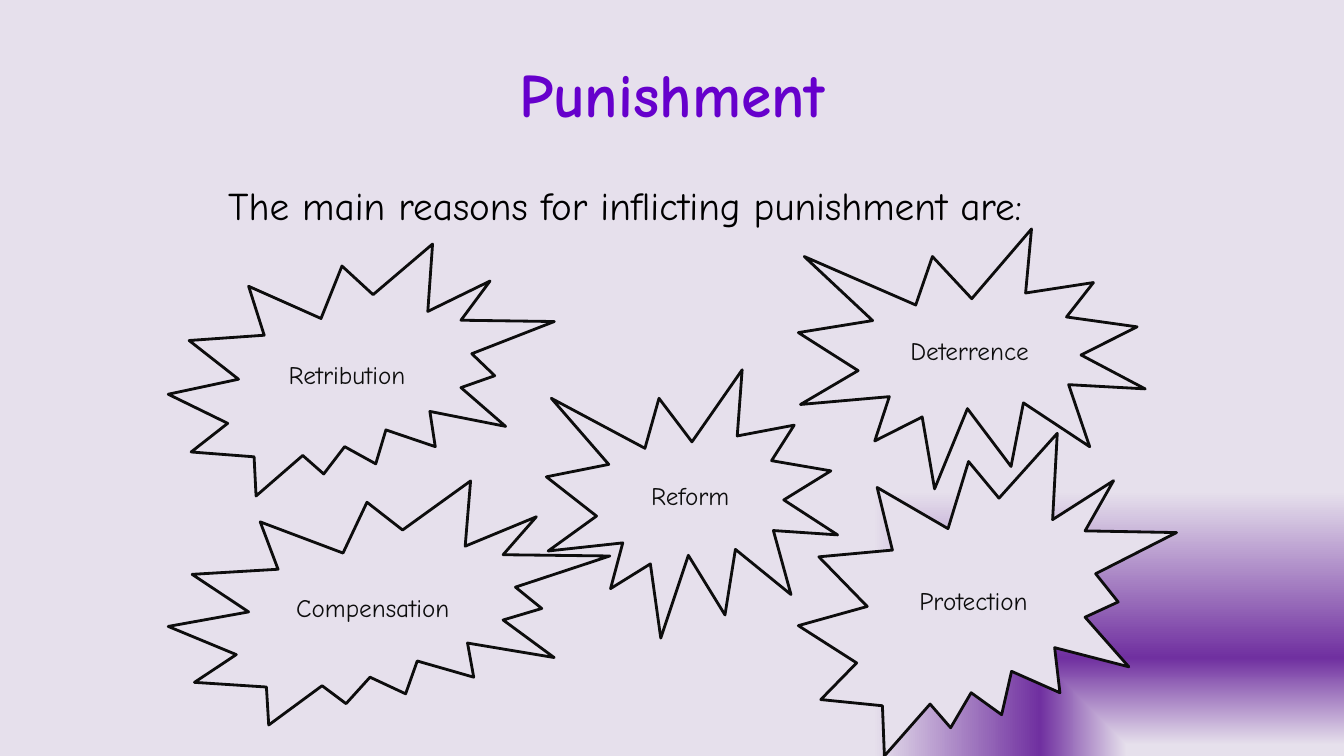
from pptx import Presentation
from pptx.dml.color import RGBColor
from pptx.enum.shapes import MSO_SHAPE as Shape
from pptx.enum.text import MSO_ANCHOR as Anchor, PP_ALIGN as Align
from pptx.oxml import parse_xml
from pptx.oxml.ns import nsdecls
from pptx.util import Cm, Pt

FONT = "Comic Neue"
LILAC, PURPLE, VIOLET, INK, BLACK = "E6E0EC", "7030A0", "6600CC", "0D0D0D", "000000"
REASONS = [
    ("Retribution", Shape.EXPLOSION2, (4.24, 6.15, 9.73, 6.35)),
    ("Deterrence", Shape.EXPLOSION1, (20.12, 5.77, 8.74, 6.55)),
    ("Compensation", Shape.EXPLOSION2, (4.24, 12.12, 11.13, 6.15)),
    ("Protection", Shape.EXPLOSION2, (20.12, 10.92, 9.53, 8.13)),
    ("Reform", Shape.EXPLOSION1, (13.77, 9.32, 7.34, 6.76)),
]


def color(value):
    """Turn a hex string into a colour."""
    return RGBColor.from_string(value)


def write(shape, text, size, ink, align=Align.CENTER, anchor=Anchor.MIDDLE, bold=False, before=0):
    """Put one formatted paragraph into a shape and return its run."""
    frame = shape.text_frame
    frame.word_wrap = True
    frame.vertical_anchor = anchor
    paragraph = frame.paragraphs[0]
    paragraph.alignment = align
    paragraph.space_before = Pt(before)
    run = paragraph.add_run()
    run.text = text
    run.font.name = FONT
    run.font.size = Pt(size)
    run.font.bold = bold
    run.font.color.rgb = color(ink)
    return run


def paint_background(slide):
    """Fill the slide with a gradient that spreads from the lower right corner."""
    fill = slide.background.fill
    fill.solid()
    stops = "".join(
        f'<a:gs pos="{percent * 1000}"><a:srgbClr val="{value}"/></a:gs>'
        for percent, value in ((3, LILAC), (26, PURPLE), (70, LILAC))
    )
    gradient = parse_xml(
        f'<a:gradFill {nsdecls("a")} rotWithShape="1"><a:gsLst>{stops}</a:gsLst>'
        '<a:path path="rect"><a:fillToRect l="100000" t="100000"/></a:path></a:gradFill>'
    )
    properties = slide.background._cSld.bg.bgPr
    properties.replace(properties[0], gradient)


def add_title(slide, text, box):
    """Add the outlined title centred in its box."""
    shape = slide.shapes.add_textbox(*map(Cm, box))
    run = write(shape, text, 44, VIOLET, bold=True)
    outline = parse_xml(
        f'<a:ln {nsdecls("a")} w="11430"><a:solidFill><a:srgbClr val="{VIOLET}"/></a:solidFill></a:ln>'
    )
    run.font._element.insert(0, outline)


def add_introduction(slide, text, box):
    """Add the sentence that leads into the reasons."""
    shape = slide.shapes.add_textbox(*map(Cm, box))
    write(shape, text, 28, BLACK, align=Align.LEFT, anchor=Anchor.TOP, before=5.6)


def add_reason(slide, text, kind, box):
    """Add one starburst with its reason."""
    burst = slide.shapes.add_shape(kind, *map(Cm, box))
    burst.shadow.inherit = False
    burst.fill.solid()
    burst.fill.fore_color.rgb = color(LILAC)
    burst.line.color.rgb = color(INK)
    burst.line.width = Pt(2)
    write(burst, text, 18, INK)


def main():
    """Build and save the slide."""
    presentation = Presentation()
    presentation.slide_width, presentation.slide_height = Cm(33.87), Cm(19.05)
    slide = presentation.slides.add_slide(presentation.slide_layouts[6])
    paint_background(slide)
    add_title(slide, "Punishment", (1.7, 0.76, 30.48, 3.18))
    add_introduction(slide, "The main reasons for inflicting punishment are:", (5.5, 4.45, 22.86, 2.3))
    for text, kind, box in REASONS:
        add_reason(slide, text, kind, box)
    presentation.save("out.pptx")


if __name__ == "__main__":
    main()
